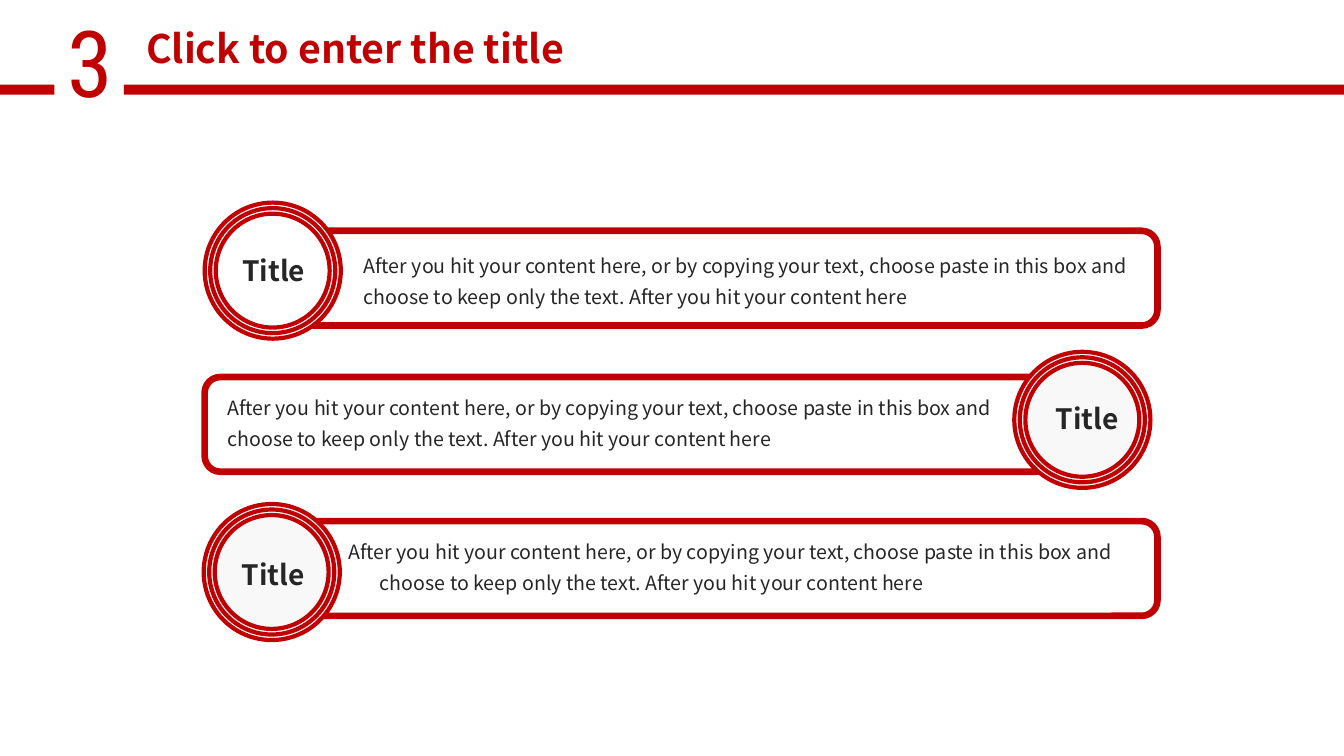
from pptx import Presentation
from pptx.dml.color import RGBColor
from pptx.enum import shapes, text
from pptx.util import Inches, Pt

RED, DARK, PALE, WHITE = "C00000", "262626", "F8F8F8", "FFFFFF"
SANS = "Noto Sans CJK SC"
BODY = ("After you hit your content here, or by copying your text, choose paste in this box "
        "and choose to keep only the text. After you hit your content here")
LEFT, CENTER = text.PP_ALIGN.LEFT, text.PP_ALIGN.CENTER


def add_shape(parent, kind, box, fill=None, line=None, width=0):
    sp = parent.add_shape(kind, *map(Inches, box))
    sp.shadow.inherit = False
    for part, color in ((sp.fill, fill), (sp.line.fill, line)):
        if color:
            part.solid()
            part.fore_color.rgb = RGBColor.from_string(color)
        else:
            part.background()
    if line:
        sp.line.width = Pt(width)


def add_text(box, words, size, color, font=SANS, bold=False, align=LEFT):
    """Add a one-paragraph text box and return its paragraph."""
    tf = s.shapes.add_textbox(*map(Inches, box)).text_frame
    tf.word_wrap = True
    tf.auto_size = text.MSO_AUTO_SIZE.SHAPE_TO_FIT_TEXT
    p = tf.paragraphs[0]
    p.alignment = align
    r = p.add_run()
    r.text = words
    r.font.size = Pt(size)
    r.font.name = font
    r.font.bold = bold
    r.font.color.rgb = RGBColor.from_string(color)
    # East Asian slot uses the same typeface
    ea = r.font._element.makeelement(
        "{http://schemas.openxmlformats.org/drawingml/2006/main}ea", {"typeface": font})
    r.font._element.append(ea)
    return p


prs = Presentation()
prs.slide_width, prs.slide_height = Inches(13.33), Inches(7.5)
s = prs.slides.add_slide(prs.slide_layouts[6])

# Header
add_text((0.57, 0, 0.34, 1.21), "3", 66, RED, "Roboto Condensed")
for left, width in ((1.23, 12.1), (0, 0.54)):
    add_shape(s.shapes, shapes.MSO_SHAPE.RECTANGLE, (left, 0.84, width, 0.1), RED)
add_text((1.24, 0.19, 4.56, 0.57), "Click to enter the title", 28, RED,
         bold=True, align=CENTER)

# Rows: bar, ring position, middle ring fill, title box and alignment, body box, hanging indent
rows = [
    ((2.96, 2.29, 8.52, 0.94), (2.03, 2.01), WHITE,
     (2.05, 2.47, 1.33, 0.44), CENTER, (3.51, 2.4, 7.81, 0.68), 0),
    ((2.03, 3.74, 8.4, 0.94), (10.06, 3.49), None,
     (10.37, 3.93, 1.09, 0.44), LEFT, (2.16, 3.81, 7.84, 0.68), 0),
    ((2.96, 5.17, 8.52, 0.94), (2.02, 5), None,
     (2.3, 5.48, 1.25, 0.44), LEFT, (3.36, 5.24, 8.11, 0.68), 0.31),
]
RING_SIZE, RING_STEP = 1.35, 0.055
for bar, (x, y), middle, title_box, align, body_box, hanging in rows:
    add_shape(s.shapes, shapes.MSO_SHAPE.ROUNDED_RECTANGLE, bar, line=RED, width=4.75)

    rings = s.shapes.add_group_shape()
    for i, fill in enumerate((PALE, middle, None)):
        inset = i * RING_STEP
        size = RING_SIZE - 2 * inset
        add_shape(rings.shapes, shapes.MSO_SHAPE.OVAL,
                  (x + inset, y + inset, size, size), fill, RED, 3)

    add_text(title_box, "Title", 20, DARK, bold=True, align=align)
    p = add_text(body_box, BODY, 14, DARK)
    p.line_spacing = 1.3
    if hanging:
        pPr = p._p.get_or_add_pPr()
        pPr.set("marL", str(Inches(hanging)))
        pPr.set("indent", str(-Inches(hanging)))

prs.save("out.pptx")
